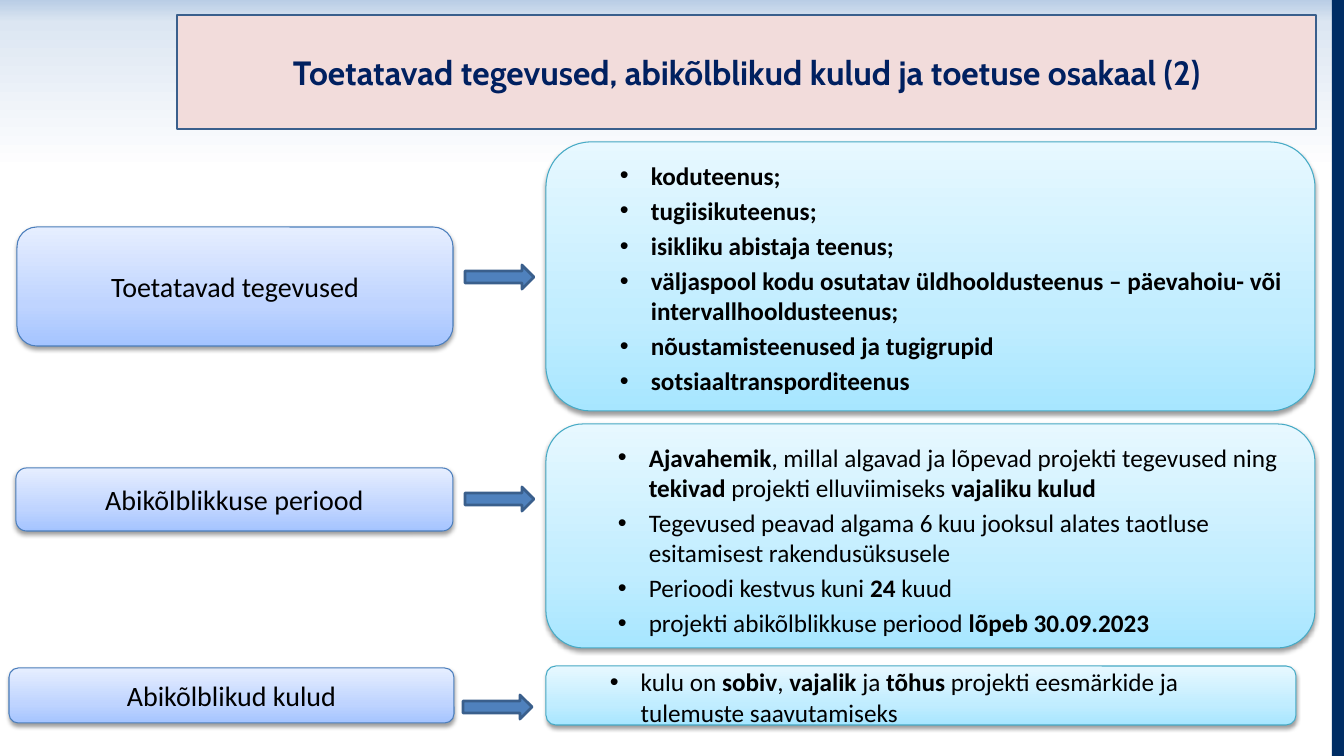
from lxml import etree
from pptx import Presentation, util as u
from pptx.dml.color import RGBColor
from pptx.enum import shapes, text
from pptx.oxml import parse_xml
from pptx.oxml.ns import nsdecls, qn

PX = 914400 / 100.8
NAVY = RGBColor(0x00, 0x20, 0x60)
EDGE_NAVY = RGBColor(0x00, 0x2D, 0x64)
PINK = RGBColor(0xF2, 0xDC, 0xDB)
BLUE = RGBColor(0x4F, 0x81, 0xBD)
DARK_BLUE = RGBColor(0x3A, 0x5F, 0x8C)
LABEL_LINE = RGBColor(0x4B, 0x7E, 0xBC)
PANEL_LINE = RGBColor(0x46, 0xAA, 0xC5)
BLACK = RGBColor(0, 0, 0)
# Gradient stops: percent and colour
BAND_STOPS = [(0, RGBColor(0xB9, 0xCD, 0xE5)), (13, RGBColor(0xDC, 0xE6, 0xF2)),
              (100, RGBColor(0xFF, 0xFF, 0xFF))]
LABEL_STOPS = [(0, RGBColor(0xA4, 0xC4, 0xFF)), (35, RGBColor(0xBF, 0xD4, 0xFF)),
               (100, RGBColor(0xE6, 0xEE, 0xFF))]
PANEL_STOPS = [(0, RGBColor(0xA7, 0xE6, 0xFF)), (35, RGBColor(0xC1, 0xED, 0xFF)),
               (100, RGBColor(0xE7, 0xF8, 0xFF))]
LABEL_FORMAT = {"name": "Calibri", "size": u.Pt(20), "bold": False}
PANEL_FORMAT = {"name": "Calibri", "size": u.Pt(18), "bold": False}
TITLE_FORMAT = {"name": "Cabin", "size": u.Pt(24), "bold": True}
SHADOW = ('<a:effectLst %s><a:outerShdw blurRad="40000" dist="20000" dir="5400000" '
          'rotWithShape="0"><a:srgbClr val="000000"><a:alpha val="38000"/></a:srgbClr>'
          '</a:outerShdw></a:effectLst>' % nsdecls("a"))

presentation = Presentation()
presentation.slide_width, presentation.slide_height = round(1344 * PX), round(756 * PX)
slide = presentation.slides.add_slide(presentation.slide_layouts[5])


def add_box(kind, box, fill, line=None, line_width=0.75, angle=270, shadow=False):
    """Add a shape; fill is one colour or a list of gradient stops."""
    shape = slide.shapes.add_shape(kind, *[round(length * PX) for length in box])
    shape.shadow.inherit = False
    properties = shape._element.spPr
    if isinstance(fill, list):
        stops = "".join('<a:gs pos="%d"><a:srgbClr val="%s"/></a:gs>' % (percent * 1000, colour)
                        for percent, colour in fill)
        properties.find(qn("a:prstGeom")).addnext(parse_xml(
            '<a:gradFill %s rotWithShape="1"><a:gsLst>%s</a:gsLst><a:lin ang="%d" scaled="0"/>'
            '</a:gradFill>' % (nsdecls("a"), stops, angle * 60000)))
    else:
        shape.fill.solid()
        shape.fill.fore_color.rgb = fill
    if line is None:
        shape.line.fill.background()
    else:
        shape.line.color.rgb = line
        shape.line.width = u.Pt(line_width)
    if shadow:
        properties.replace(properties.find(qn("a:effectLst")), parse_xml(SHADOW))
    shape.text_frame.word_wrap = True
    shape.text_frame.vertical_anchor = text.MSO_ANCHOR.MIDDLE
    return shape


def write(paragraph, words, values, colour):
    """Add runs to a paragraph; words between ** marks are bold."""
    for number, part in enumerate(words.split("**")):
        if part:
            run = paragraph.add_run()
            run.text = part
            for name, value in values.items():
                setattr(run.font, name, value)
            run.font.color.rgb = colour
            if number % 2:
                run.font.bold = True


# Background band and right edge
add_box(shapes.MSO_SHAPE.RECTANGLE, (0, 0, 1344, 171), BAND_STOPS, angle=90)
add_box(shapes.MSO_SHAPE.RECTANGLE, (1332, 0, 12, 756), EDGE_NAVY)

# Title, in front of the band
title = slide.shapes.title
slide.shapes._spTree.append(title._element)
for name, length in {"left": 177, "top": 15, "width": 1139, "height": 114}.items():
    setattr(title, name, round(length * PX))
title.fill.solid()
title.fill.fore_color.rgb = PINK
title.line.color.rgb = DARK_BLUE
title.line.width = u.Pt(2)
title_format = {"margin_left": 0, "margin_right": 0, "margin_top": 0, "margin_bottom": 0,
                "word_wrap": True, "auto_size": text.MSO_AUTO_SIZE.NONE,
                "vertical_anchor": text.MSO_ANCHOR.MIDDLE}
for name, value in title_format.items():
    setattr(title.text_frame, name, value)
heading = title.text_frame.paragraphs[0]
heading.alignment = text.PP_ALIGN.CENTER
write(heading, "Toetatavad tegevused, abikõlblikud kulud ja toetuse osakaal (2)", TITLE_FORMAT, NAVY)

# Rows: label, label box, arrow position, panel box, top inset, bullets
ROWS = [
    ("Toetatavad tegevused", (17, 227, 436, 119), (465, 265), (546, 142, 769, 269), 8, [
        "**koduteenus;**",
        "**tugiisikuteenus;**",
        "**isikliku abistaja teenus;**",
        "**väljaspool kodu osutatav üldhooldusteenus – päevahoiu- või intervallhooldusteenus;**",
        "**nõustamisteenused ja tugigrupid**",
        "**sotsiaaltransporditeenus**"]),
    ("Abikõlblikkuse periood", (16, 468, 437, 63), (465, 487), (546, 424, 769, 224), 13, [
        "**Ajavahemik**, millal algavad ja lõpevad projekti tegevused ning "
        "**tekivad **projekti elluviimiseks **vajaliku kulud**",
        "Tegevused peavad algama 6 kuu jooksul alates taotluse esitamisest rakendusüksusele",
        "Perioodi kestvus kuni **24** kuud",
        "projekti abikõlblikkuse periood **lõpeb 30.09.2023**"]),
    ("Abikõlblikud kulud", (9, 668, 445, 55), (463, 695), (546, 666, 750, 59), 8, [
        "kulu on **sobiv**, **vajalik** ja **tõhus **projekti eesmärkide ja "
        "tulemuste saavutamiseks"]),
]
for label, label_box, arrow_at, panel_box, top_inset, bullets in ROWS:
    label_shape = add_box(shapes.MSO_SHAPE.ROUNDED_RECTANGLE, label_box, LABEL_STOPS,
                          LABEL_LINE, shadow=True)
    paragraph = label_shape.text_frame.paragraphs[0]
    paragraph.alignment = text.PP_ALIGN.CENTER
    write(paragraph, label, LABEL_FORMAT, BLACK)

    panel = add_box(shapes.MSO_SHAPE.ROUNDED_RECTANGLE, panel_box, PANEL_STOPS,
                    PANEL_LINE, shadow=True)
    panel.text_frame.margin_top = round(top_inset * PX)
    for number, bullet in enumerate(bullets):
        paragraph = panel.text_frame.paragraphs[0] if number == 0 else panel.text_frame.add_paragraph()
        properties = paragraph._p.get_or_add_pPr()
        properties.set("marL", str(round(82 * PX)))
        properties.set("indent", str(round(-31 * PX)))
        etree.SubElement(properties, qn("a:buFont")).set("typeface", "Arial")
        etree.SubElement(properties, qn("a:buChar")).set("char", "•")
        paragraph.alignment = text.PP_ALIGN.LEFT
        if number:
            paragraph.space_before = u.Pt(3.5)
        write(paragraph, bullet, PANEL_FORMAT, BLACK)

    add_box(shapes.MSO_SHAPE.RIGHT_ARROW, (*arrow_at, 69, 24), BLUE, DARK_BLUE, 2)

presentation.save("out.pptx")
